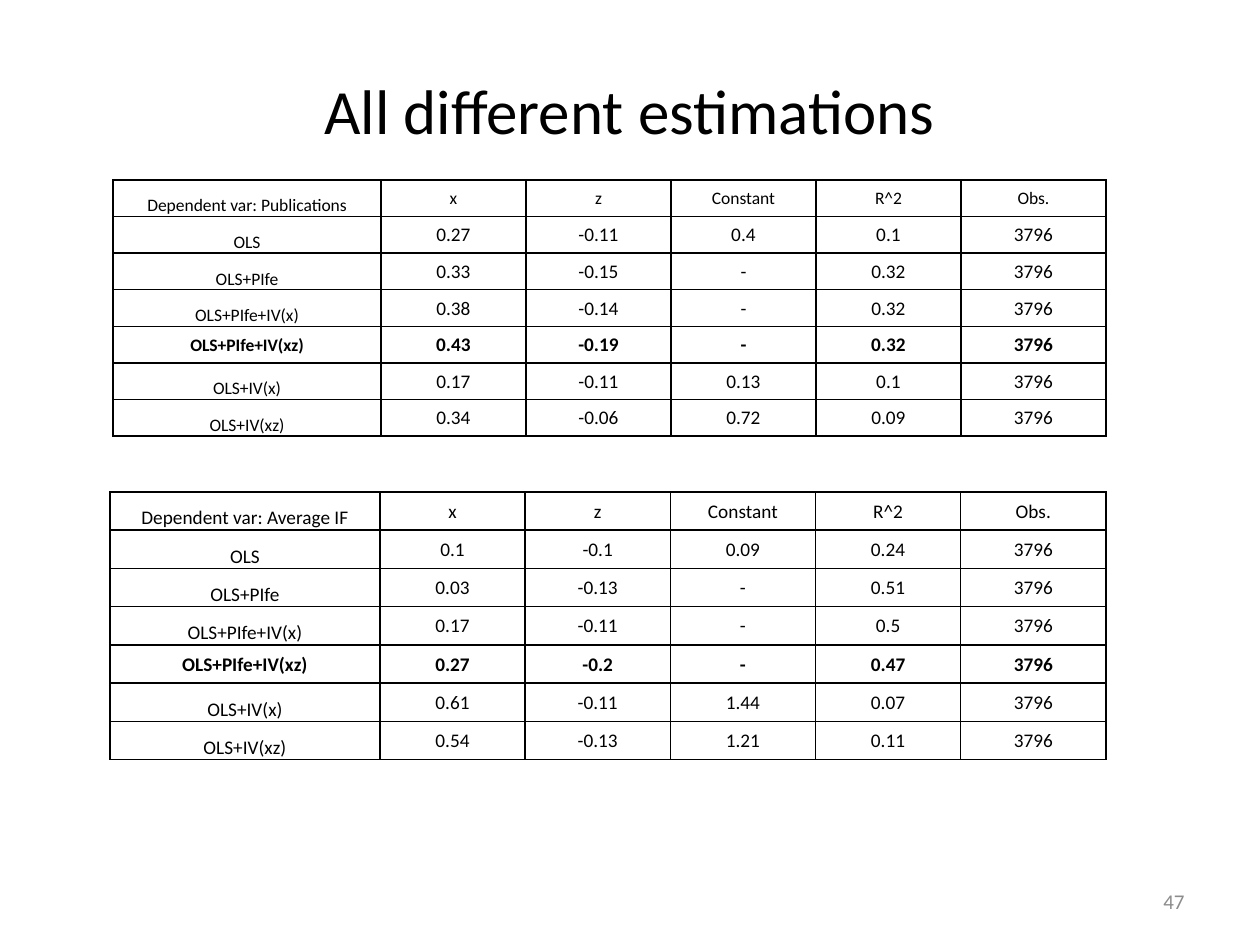
from lxml.etree import SubElement
from pptx import Presentation
from pptx.dml.color import RGBColor
from pptx.enum.text import MSO_ANCHOR, PP_ALIGN
from pptx.oxml.ns import qn
from pptx.util import Emu, Pt

# Content
TITLE = "All different estimations"
PAGE = "47"
HEADS = ["x", "z", "Constant", "R^2", "Obs."]
BOLD = "OLS+PIfe+IV(xz)"
TABLES = [
    {
        "box": (113, 180, 993, 256), "first": 268, "small": 10,
        "rows": [
            ["Dependent var: Publications"] + HEADS,
            ["OLS", "0.27", "-0.11", "0.4", "0.1", "3796"],
            ["OLS+PIfe", "0.33", "-0.15", "-", "0.32", "3796"],
            ["OLS+PIfe+IV(x)", "0.38", "-0.14", "-", "0.32", "3796"],
            [BOLD, "0.43", "-0.19", "-", "0.32", "3796"],
            ["OLS+IV(x)", "0.17", "-0.11", "0.13", "0.1", "3796"],
            ["OLS+IV(xz)", "0.34", "-0.06", "0.72", "0.09", "3796"],
        ],
    },
    {
        "box": (110, 492, 996, 268), "first": 270, "small": 11,
        "rows": [
            ["Dependent var: Average IF"] + HEADS,
            ["OLS", "0.1", "-0.1", "0.09", "0.24", "3796"],
            ["OLS+PIfe", "0.03", "-0.13", "-", "0.51", "3796"],
            ["OLS+PIfe+IV(x)", "0.17", "-0.11", "-", "0.5", "3796"],
            [BOLD, "0.27", "-0.2", "-", "0.47", "3796"],
            ["OLS+IV(x)", "0.61", "-0.11", "1.44", "0.07", "3796"],
            ["OLS+IV(xz)", "0.54", "-0.13", "1.21", "0.11", "3796"],
        ],
    },
]
COLORS = {"ink": "000000", "gray": "8C8C8C"}
FONT = "Calibri"


def px(n):
    return Emu(round(n * 914400 / 126))


def write(frame, text, size, color="ink", align=PP_ALIGN.CENTER, bold=False):
    frame.text = text
    line = frame.paragraphs[0]
    line.alignment = align
    font = line.runs[0].font
    font.name, font.size, font.bold = FONT, Pt(size), bold
    font.color.rgb = RGBColor.from_string(COLORS[color])


def place(shape, box):
    shape.left, shape.top, shape.width, shape.height = map(px, box)


def frame_cell(cell):
    props = cell._tc.get_or_add_tcPr()
    for side in ("a:lnL", "a:lnR", "a:lnT", "a:lnB"):
        line = SubElement(props, qn(side), w=str(Pt(1)))
        fill = SubElement(line, qn("a:solidFill"))
        SubElement(fill, qn("a:srgbClr"), val=COLORS["ink"])
    cell.fill.background()


def add_grid(slide, data):
    rows, first = data["rows"], data["first"]
    count = len(rows[0])
    wide, high = data["box"][2:]
    grid = slide.shapes.add_table(len(rows), count, *map(px, data["box"])).table
    grid.first_row = grid.horz_banding = False
    for c, col in enumerate(grid.columns):
        col.width = px((wide - first) / (count - 1) if c else first)
    for r, row in enumerate(rows):
        grid.rows[r].height = px(high / len(rows))
        bold = row[0] == BOLD
        for c, text in enumerate(row):
            cell = grid.cell(r, c)
            cell.margin_left = cell.margin_right = cell.margin_top = px(1)
            cell.margin_bottom = 0
            low = c == 0 and not bold
            cell.vertical_anchor = MSO_ANCHOR.BOTTOM if low else MSO_ANCHOR.MIDDLE
            size = 11 if r and c else data["small"]
            write(cell.text_frame, text, size, bold=bold)
            frame_cell(cell)


def main():
    deck = Presentation()
    deck.slide_width, deck.slide_height = px(1260), px(945)
    slide = deck.slides.add_slide(deck.slide_layouts[5])

    # Title
    title = slide.shapes.title
    place(title, (6, 16, 1247, 187))
    title.text_frame.vertical_anchor = MSO_ANCHOR.MIDDLE
    write(title.text_frame, TITLE, 36)

    # Tables
    for data in TABLES:
        add_grid(slide, data)

    # Page number
    page = slide.shapes.add_textbox(*map(px, (903, 876, 294, 50))).text_frame
    page.word_wrap = True
    page.vertical_anchor = MSO_ANCHOR.MIDDLE
    write(page, PAGE, 12, "gray", PP_ALIGN.RIGHT)

    deck.save("out.pptx")


if __name__ == "__main__":
    main()
